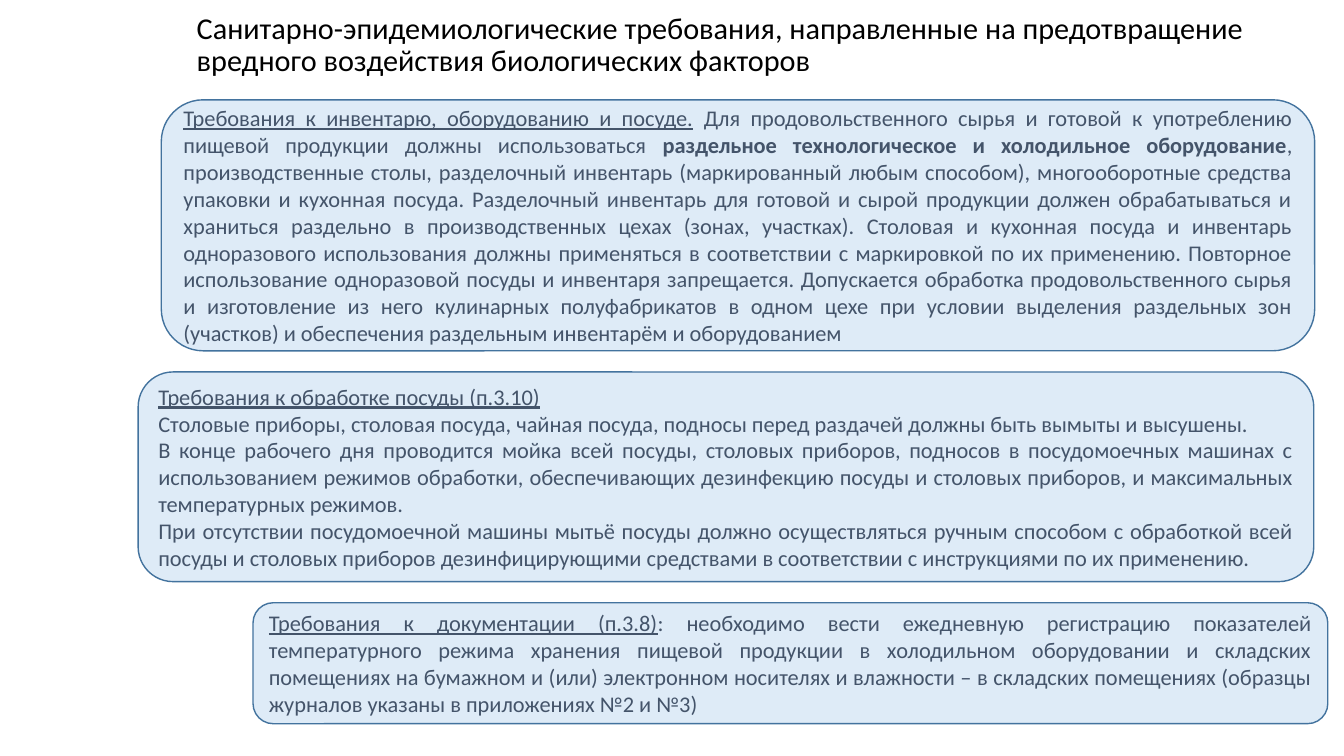
from pptx import Presentation
from pptx.dml.color import RGBColor as Rgb
from pptx.enum.shapes import MSO_SHAPE as Shape
from pptx.enum.text import MSO_ANCHOR as Anchor, MSO_AUTO_SIZE as Fit, PP_ALIGN as Align
from pptx.util import Inches, Pt


def tint(code):
    return Rgb.from_string(code)


class Deck:
    """Holds the style and the current slide; lengths are percent of the slide."""

    font, size, head = "Calibri", 16, 21.6
    ink, text, fill, edge = "000000", "44546A", "DEEBF7", "43739E"

    def __init__(self):
        self.file = Presentation()
        self.file.slide_width = Inches(13.33)
        self.file.slide_height = Inches(7.5)
        self.slide = self.file.slides.add_slide(self.file.slide_layouts[5])

    def area(self, left, top, width, height):
        wide, high = self.file.slide_width, self.file.slide_height
        return [int(share * full / 100) for share, full in
                zip((left, top, width, height), (wide, high, wide, high))]

    def style(self, run, size, color, mark=""):
        font = run.font
        font.name, font.size = self.font, Pt(size)
        font.color.rgb = tint(color)
        font.underline, font.bold = mark == "u", mark == "b"

    def title(self, text, *place):
        box = self.slide.shapes.title
        box.left, box.top, box.width, box.height = self.area(*place)
        frame = box.text_frame
        frame.text = text
        frame.word_wrap, frame.auto_size = True, Fit.NONE
        frame.vertical_anchor = Anchor.MIDDLE
        line = frame.paragraphs[0]
        line.alignment, line.line_spacing = Align.LEFT, 0.9
        self.style(line.runs[0], self.head, self.ink)

    def card(self, lines, *place):
        box = self.slide.shapes.add_shape(Shape.ROUNDED_RECTANGLE, *self.area(*place))
        box.shadow.inherit = False
        box.fill.solid()
        box.fill.fore_color.rgb = tint(self.fill)
        box.line.color.rgb = tint(self.edge)
        box.line.width = Pt(1)
        frame = box.text_frame
        frame.word_wrap, frame.vertical_anchor = True, Anchor.MIDDLE
        for num, parts in enumerate(lines):
            line = frame.add_paragraph() if num else frame.paragraphs[0]
            line.alignment = Align.JUSTIFY
            for text, mark in parts:
                run = line.add_run()
                run.text = text
                self.style(run, self.size, self.text, mark)

    def save(self):
        self.file.save("out.pptx")


TOOLS = [[
    ("Требования к инвентарю, оборудованию и посуде.", "u"),
    (" Для продовольственного сырья и готовой к употреблению пищевой продукции "
     "должны использоваться ", ""),
    ("раздельное технологическое и холодильное оборудование", "b"),
    (", производственные столы, разделочный инвентарь (маркированный любым способом), "
     "многооборотные средства упаковки и кухонная посуда. Разделочный инвентарь для "
     "готовой и сырой продукции должен обрабатываться и храниться раздельно в "
     "производственных цехах (зонах, участках). Столовая и кухонная посуда и инвентарь "
     "одноразового использования должны применяться в соответствии с маркировкой по их "
     "применению. Повторное использование одноразовой посуды и инвентаря запрещается. "
     "Допускается обработка продовольственного сырья и изготовление из него кулинарных "
     "полуфабрикатов в одном цехе при условии выделения раздельных зон (участков) и "
     "обеспечения раздельным инвентарём и оборудованием", ""),
]]

DISHES = [
    [("Требования к обработке посуды (п.3.10)", "u")],
    [("Столовые приборы, столовая посуда, чайная посуда, подносы перед раздачей "
      "должны быть вымыты и высушены.", "")],
    [("В конце рабочего дня проводится мойка всей посуды, столовых приборов, подносов в "
      "посудомоечных машинах с использованием режимов обработки, обеспечивающих "
      "дезинфекцию посуды и столовых приборов, и максимальных температурных режимов.", "")],
    [("При отсутствии посудомоечной машины мытьё посуды должно осуществляться ручным "
      "способом с обработкой всей посуды и столовых приборов дезинфицирующими средствами "
      "в соответствии с инструкциями по их применению.", "")],
]

RECORDS = [[
    ("Требования к документации (п.3.8)", "u"),
    (": необходимо вести ежедневную регистрацию показателей температурного режима "
     "хранения пищевой продукции в холодильном оборудовании и складских помещениях на "
     "бумажном и (или) электронном носителях и влажности – в складских помещениях "
     "(образцы журналов указаны в приложениях №2 и №3)", ""),
]]


def main():
    deck = Deck()
    deck.title("Санитарно-эпидемиологические требования, направленные на предотвращение "
               "вредного воздействия биологических факторов", 13.88, 2.13, 82.22, 7.87)
    deck.card(TOOLS, 12, 13.2, 85.82, 33.2)
    deck.card(DISHES, 10.28, 49.2, 87.47, 27.73)
    deck.card(RECORDS, 18.83, 79.73, 79.97, 16)
    deck.save()


if __name__ == "__main__":
    main()
